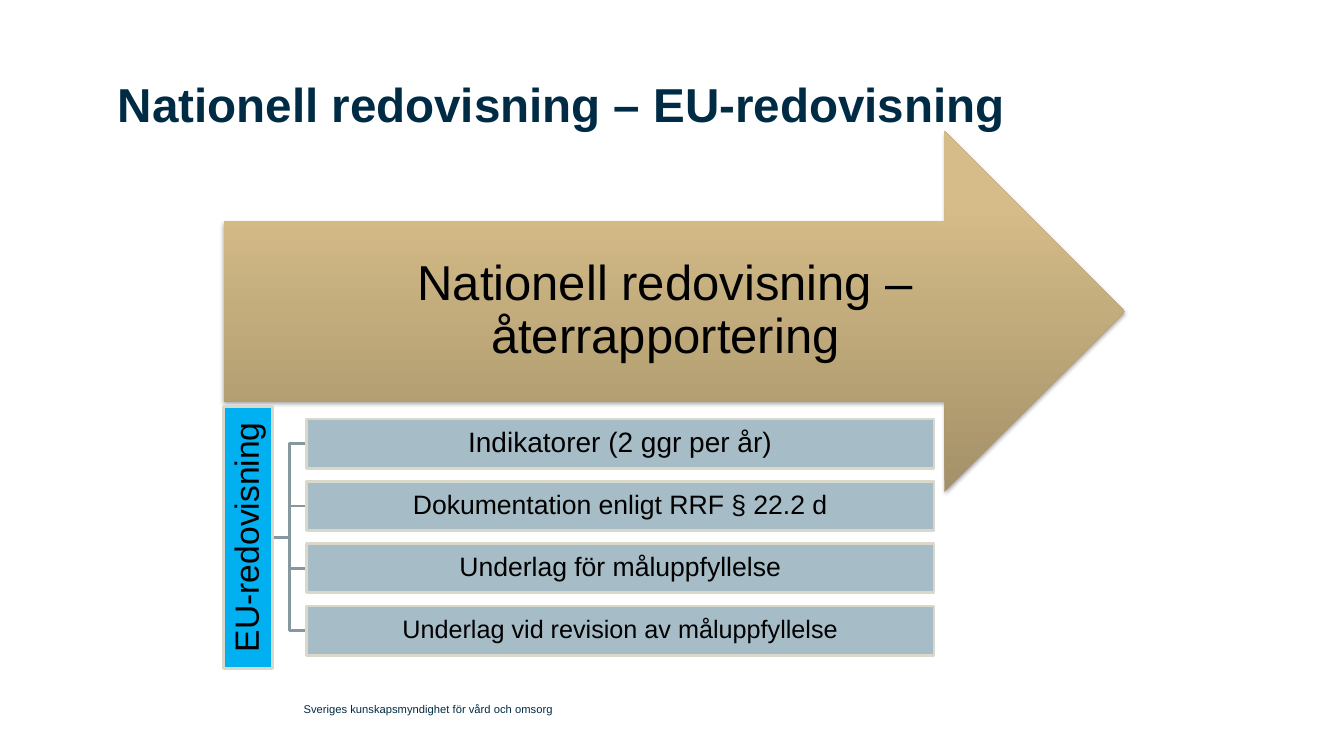
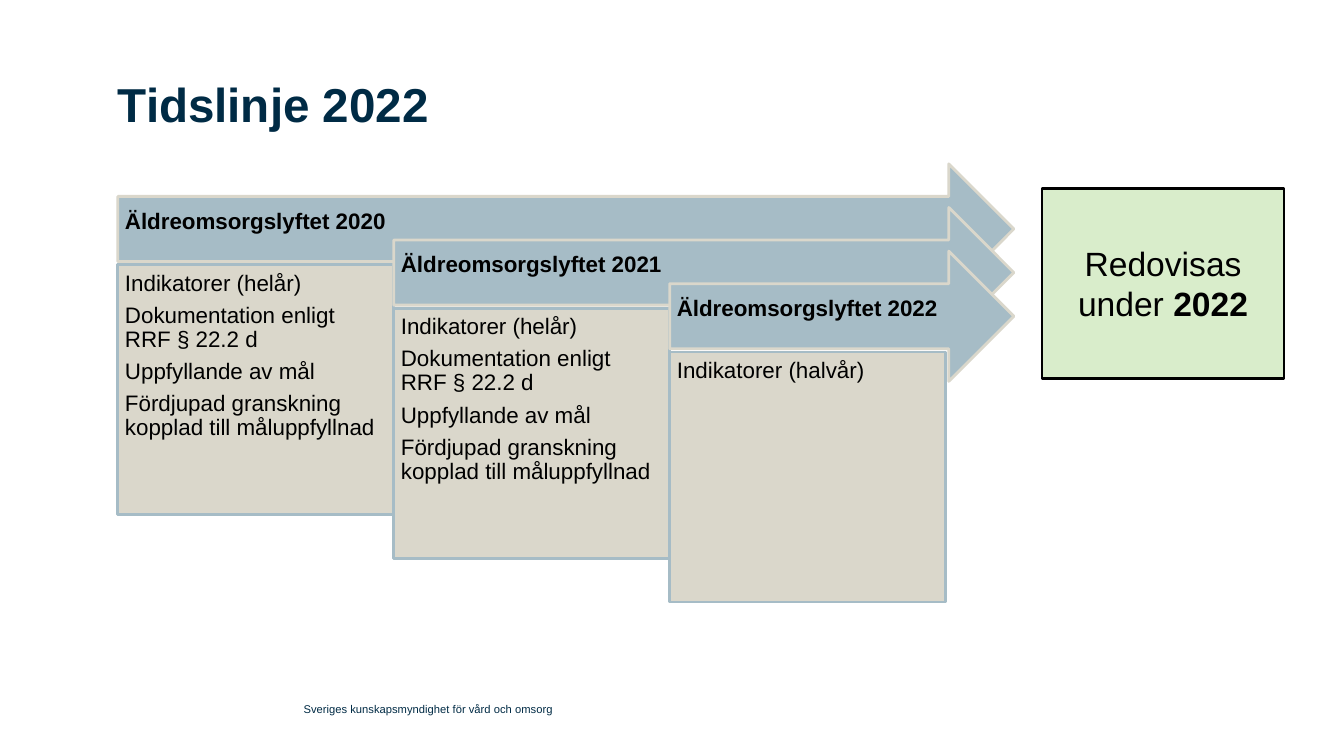
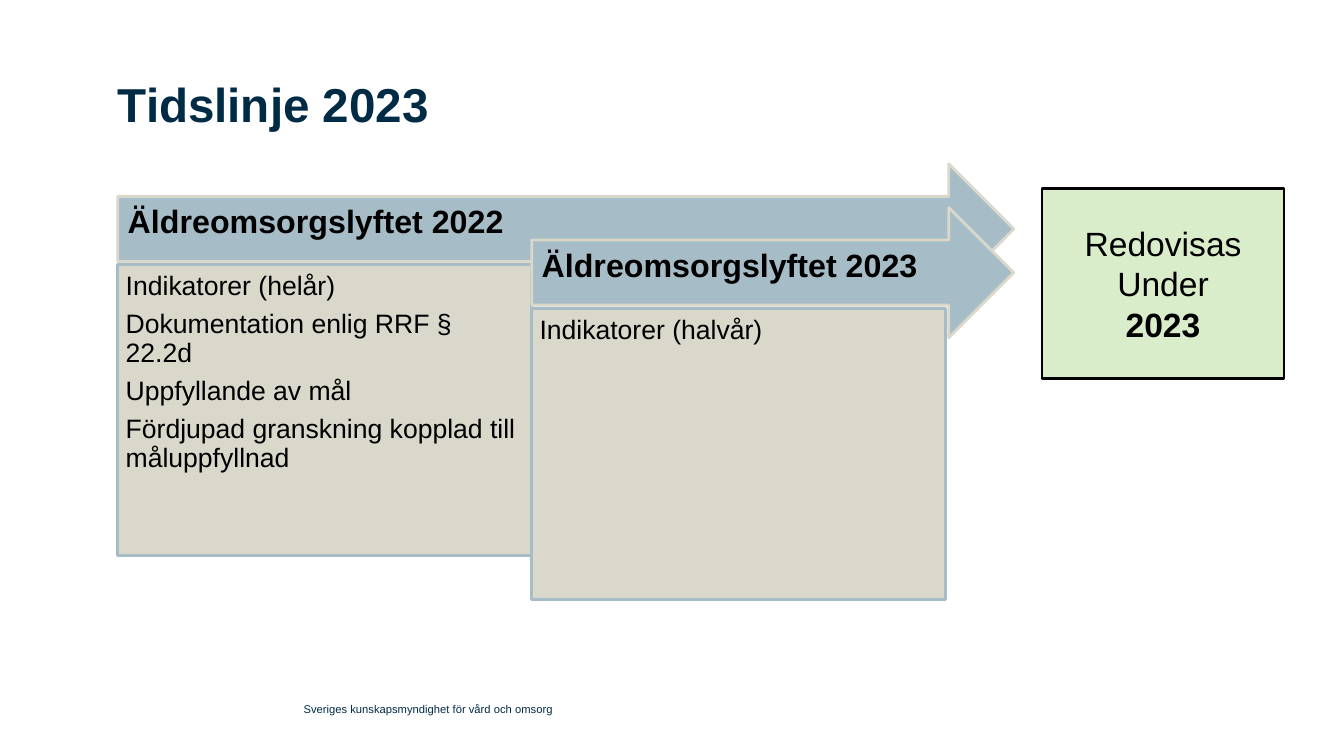
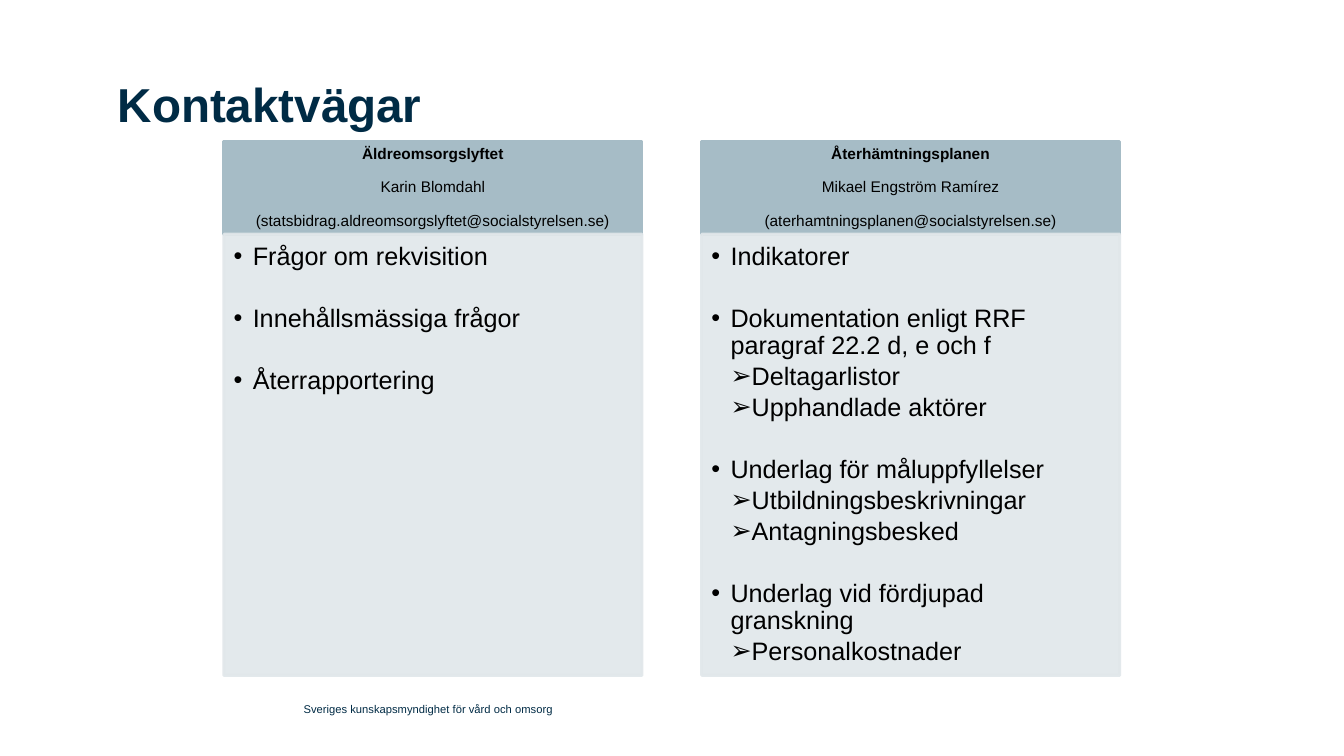
"""Build four slides on national and EU reporting."""
from copy import deepcopy
from dataclasses import dataclass

from lxml.etree import SubElement
from pptx import Presentation
from pptx.dml.color import RGBColor
from pptx.enum.shapes import MSO_CONNECTOR, MSO_SHAPE
from pptx.enum.text import MSO_ANCHOR, MSO_AUTO_SIZE, PP_ALIGN
from pptx.oxml.ns import qn
from pptx.util import Cm, Pt


@dataclass(frozen=True)
class Theme:
    font: str = "Arial"
    navy: str = "002B45"
    black: str = "000000"
    blue: str = "A6BCC6"
    pale: str = "E1E7EA"
    sand: str = "DAD7CB"
    green: str = "D9EDCB"
    cyan: str = "00B0F0"
    grey: str = "85979F"
    gold: tuple = ((0, "A49169"), (0.8, "D5BC88"), (1, "D8BE88"))
    title: int = 34
    hero: int = 35
    large: int = 24
    item: int = 18
    contact: int = 11
    footer: int = 8
    line: int = 2


TITLE_ONLY, COMPARISON = 5, 4
FOOTER = "Sveriges kunskapsmyndighet för vård och omsorg"
FULL_YEAR = "Indikatorer (helår)"
HALF_YEAR = "Indikatorer (halvår)"
GOALS = ["Uppfyllande av mål", "Fördjupad granskning kopplad till måluppfyllnad"]


class Deck:
    def __init__(self, theme):
        self.theme = theme
        self.prs = Presentation()
        self.prs.slide_width, self.prs.slide_height = Cm(33.87), Cm(19.05)

    def add_slide(self, title, layout=TITLE_ONLY):
        t = self.theme
        self.slide = self.prs.slides.add_slide(self.prs.slide_layouts[layout])
        sp = self.place(self.slide.shapes.title, 2.97, 1.9, 25.76, 3.61)
        self.set_text(sp, [title], t.title, color=t.navy, bold=True,
                      align=PP_ALIGN.LEFT, anchor=MSO_ANCHOR.TOP, spacing=1)
        sp = self.slide.shapes.add_textbox(Cm(7.65), Cm(17.5), Cm(15), Cm(0.74))
        self.set_text(sp, [FOOTER], t.footer, color=t.navy, align=PP_ALIGN.LEFT, spacing=1)

    def place(self, sp, x, y, w, h):
        sp.left, sp.top, sp.width, sp.height = Cm(x), Cm(y), Cm(w), Cm(h)
        return sp

    def paint(self, sp, fill, line):
        sp.fill.solid()
        sp.fill.fore_color.rgb = RGBColor.from_string(fill)
        sp.line.color.rgb = RGBColor.from_string(line)
        sp.line.width = Pt(self.theme.line)

    def shape(self, kind, x, y, w, h, fill=None, line=None):
        sp = self.slide.shapes.add_shape(kind, Cm(x), Cm(y), Cm(w), Cm(h))
        sp.shadow.inherit = False
        if fill:
            self.paint(sp, fill, line)
        return sp

    def set_text(self, sp, lines, size, color=None, bold=False, align=PP_ALIGN.CENTER,
                 anchor=MSO_ANCHOR.MIDDLE, margins=(0, 0, 0, 0), gap=0, spacing=0.9):
        tf = sp.text_frame
        tf.text = "\n".join(lines)
        tf.word_wrap = True
        tf.auto_size = MSO_AUTO_SIZE.NONE
        tf.vertical_anchor = anchor
        tf.margin_left, tf.margin_top, tf.margin_right, tf.margin_bottom = map(Cm, margins)
        for i, p in enumerate(tf.paragraphs):
            p.alignment = align
            p.line_spacing = spacing
            p.space_before = Pt(gap if i else 0)
            for r in p.runs:
                self.style(r, size, color, bold)
        return tf

    def style(self, r, size, color=None, bold=False):
        r.font.name = self.theme.font
        r.font.size = Pt(size)
        r.font.bold = bold
        r.font.color.rgb = RGBColor.from_string(color or self.theme.black)

    def gold_arrow(self, text, x, y, w, h):
        sp = self.shape(MSO_SHAPE.RIGHT_ARROW, x, y, w, h)
        sp.line.fill.background()
        sp.fill.gradient()
        sp.fill.gradient_angle = 90
        pr = sp._element.spPr
        stops = pr.find(".//" + qn("a:gsLst"))
        stops.append(deepcopy(stops[-1]))
        for stop, (pos, color) in zip(sp.fill.gradient_stops, self.theme.gold):
            stop.position = pos
            stop.color.rgb = RGBColor.from_string(color)
        shadow = SubElement(pr.find(qn("a:effectLst")), qn("a:outerShdw"),
                            blurRad=str(Pt(3.1)), dist=str(Pt(1.8)), dir="5400000")
        color = SubElement(shadow, qn("a:srgbClr"), val=self.theme.black)
        SubElement(color, qn("a:alpha"), val="35000")
        self.set_text(sp, [text], self.theme.hero, margins=(1.83, 0, 0, 0))

    def branch(self, x1, y1, x2, y2):
        c = self.slide.shapes.add_connector(MSO_CONNECTOR.ELBOW, Cm(x1), Cm(y1), Cm(x2), Cm(y2))
        c.line.color.rgb = RGBColor.from_string(self.theme.grey)
        c.line.width = Pt(self.theme.line)
        SubElement(c._element.spPr, qn("a:effectLst"))

    def tree(self, root, rows):
        t = self.theme
        top, step, height, left = 10.56, 1.57, 1.24, 7.72
        middle = top + (step * (len(rows) - 1) + height) / 2
        for i in range(len(rows)):
            self.branch(6.88, middle, left, top + step * i + height / 2)
        sp = self.shape(MSO_SHAPE.RECTANGLE, 2.95, middle - height / 2, 6.6, height, t.cyan, t.sand)
        sp.rotation = 270
        self.set_text(sp, [root], t.large)
        for i, (text, size) in enumerate(rows):
            sp = self.shape(MSO_SHAPE.RECTANGLE, left, top + step * i, 15.82, height, t.blue, t.sand)
            self.set_text(sp, [text], size)

    def timeline(self, stages, head_size, body_size, body_height, head_pad, body_pad):
        t = self.theme
        left, right, top, step = 2.97, 25.55, 4.13, 1.1
        width = 20.86 / len(stages)
        for i, (head, lines) in enumerate(stages):
            x, y = left + width * i, top + step * i
            sp = self.shape(MSO_SHAPE.RIGHT_ARROW, x, y, right - x, 3.28, t.blue, t.sand)
            self.set_text(sp, [head], head_size, bold=True, align=PP_ALIGN.LEFT,
                          margins=(head_pad, head_pad, 0.71, 0.53))
            sp = self.shape(MSO_SHAPE.RECTANGLE, x, y + 2.54, width, body_height, t.sand, t.blue)
            self.set_text(sp, lines, body_size, align=PP_ALIGN.LEFT, anchor=MSO_ANCHOR.TOP,
                          margins=(body_pad,) * 4, gap=0.35 * body_size)

    def result(self, lines, year):
        t = self.theme
        sp = self.shape(MSO_SHAPE.RECTANGLE, 26.26, 4.75, 6.1, 4.78, t.green, t.black)
        tf = self.set_text(sp, lines, t.large, margins=(0.25, 0.13, 0.25, 0.13), spacing=1)
        r = tf.paragraphs[-1].add_run()
        r.text = year
        self.style(r, t.large, bold=True)

    def contact(self, column, lines, items):
        t = self.theme
        x, width = 5.64 + 12.04 * column, 10.54
        head, body = (self.slide.placeholders[2 * column + k] for k in (1, 2))
        self.paint(self.place(head, x, 3.56, width, 2.34), t.blue, t.blue)
        tf = self.set_text(head, lines, t.contact, margins=(0.23, 0.13, 0.23, 0.13), gap=12)
        tf.paragraphs[0].runs[0].font.bold = True
        self.paint(self.place(body, x, 5.9, width, 11.12), t.pale, t.pale)
        for color in body._element.spPr.iter(qn("a:srgbClr")):
            SubElement(color, qn("a:alpha"), val="90000")
        tf = self.set_text(body, [text for _, text in items], t.item, align=PP_ALIGN.LEFT,
                           anchor=MSO_ANCHOR.TOP, margins=(0.25, 0.25, 0.36, 0.41))
        for i, (p, (level, _)) in enumerate(zip(tf.paragraphs, items)):
            self.bullet(p, level)
            p.space_before = Pt(22 if i and level == 0 else 0)
            p.space_after = Pt(0.15 * t.item)

    def bullet(self, p, level):
        p.level = level
        pr = p._p.get_or_add_pPr()
        pr.set("marL", str(Cm(0.48 * (level + 1))))
        pr.set("indent", str(-Cm(0.48)))
        SubElement(pr, qn("a:buFont"), typeface=self.theme.font)
        SubElement(pr, qn("a:buChar"), char="•➢"[level])


def main():
    deck = Deck(Theme())

    deck.add_slide("Nationell redovisning – EU-redovisning")
    deck.gold_arrow("Nationell redovisning – återrapportering", 5.64, 3.3, 22.71, 9.1)
    deck.tree("EU-redovisning", [
        ("Indikatorer (2 ggr per år)", 20),
        ("Dokumentation enligt RRF § 22.2 d", 19),
        ("Underlag för måluppfyllelse", 19),
        ("Underlag vid revision av måluppfyllelse", 18),
    ])

    deck.add_slide("Tidslinje 2022")
    full = [FULL_YEAR, "Dokumentation enligt RRF § 22.2 d", *GOALS]
    deck.timeline([
        ("Äldreomsorgslyftet 2020", full),
        ("Äldreomsorgslyftet 2021", full),
        ("Äldreomsorgslyftet 2022", [HALF_YEAR]),
    ], head_size=16, body_size=16, body_height=6.3, head_pad=0.18, body_pad=0.18)
    deck.result(["Redovisas", "under "], "2022")

    deck.add_slide("Tidslinje 2023")
    deck.timeline([
        ("Äldreomsorgslyftet 2022", [FULL_YEAR, "Dokumentation enlig RRF § 22.2d", *GOALS]),
        ("Äldreomsorgslyftet 2023", [HALF_YEAR]),
    ], head_size=23, body_size=19, body_height=7.34, head_pad=0.25, body_pad=0.2)
    deck.result(["Redovisas", "Under", ""], "2023")

    deck.add_slide("Kontaktvägar", COMPARISON)
    deck.contact(0, [
        "Äldreomsorgslyftet",
        "Karin Blomdahl",
        "(statsbidrag.aldreomsorgslyftet@socialstyrelsen.se)",
    ], [
        (0, "Frågor om rekvisition"),
        (0, "Innehållsmässiga frågor"),
        (0, "Återrapportering"),
    ])
    deck.contact(1, [
        "Återhämtningsplanen",
        "Mikael Engström Ramírez",
        "(aterhamtningsplanen@socialstyrelsen.se)",
    ], [
        (0, "Indikatorer"),
        (0, "Dokumentation enligt RRF paragraf 22.2 d, e och f"),
        (1, "Deltagarlistor"),
        (1, "Upphandlade aktörer"),
        (0, "Underlag för måluppfyllelser"),
        (1, "Utbildningsbeskrivningar"),
        (1, "Antagningsbesked"),
        (0, "Underlag vid fördjupad granskning"),
        (1, "Personalkostnader"),
    ])

    deck.prs.save("out.pptx")


if __name__ == "__main__":
    main()
